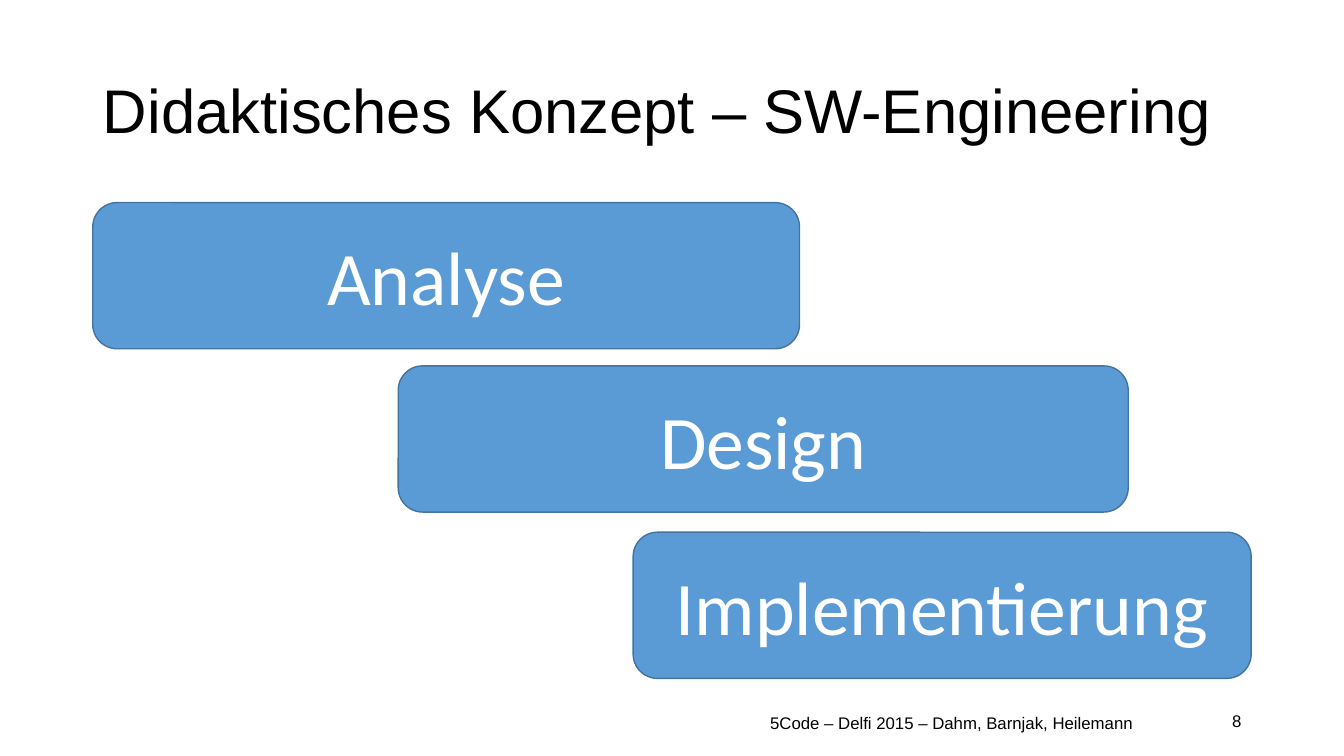
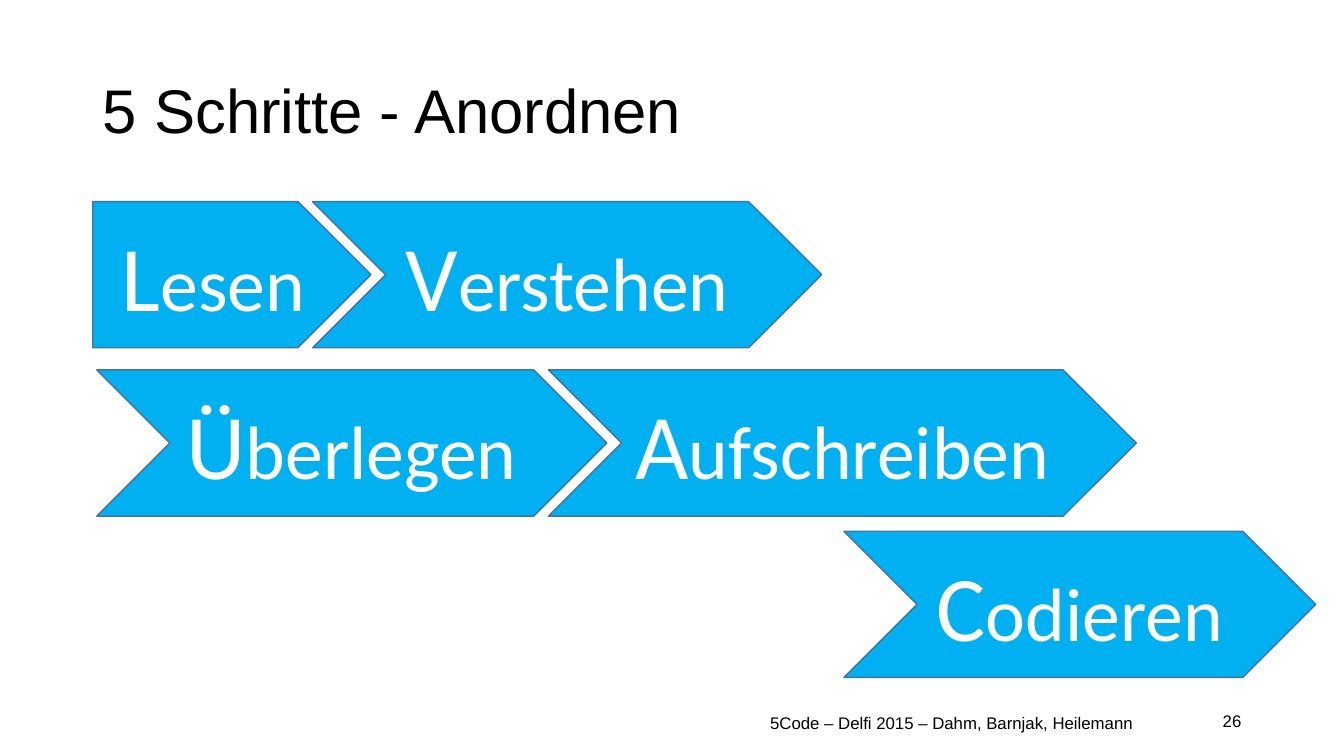
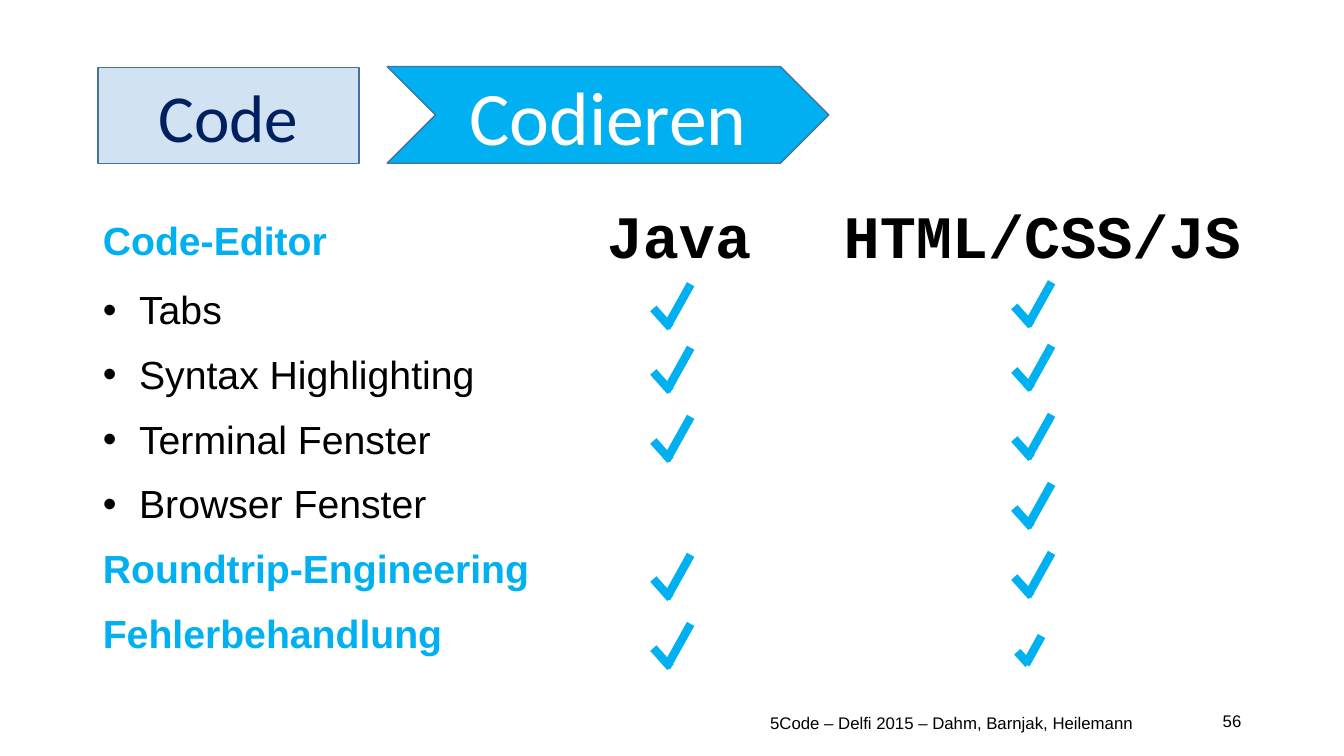
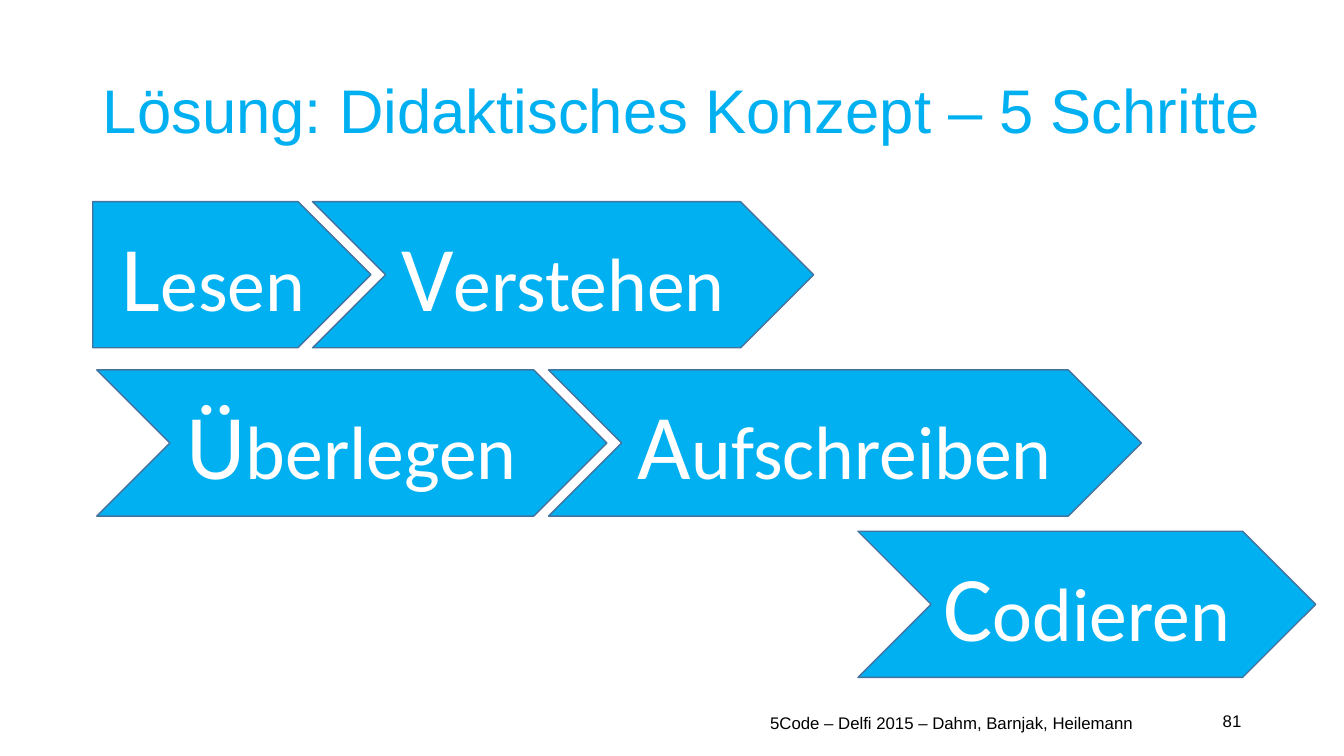
from lxml.etree import SubElement
from pptx import Presentation
from pptx.dml.color import RGBColor
from pptx.enum.shapes import MSO_CONNECTOR as Connector, MSO_SHAPE as Shape
from pptx.enum.text import MSO_ANCHOR as Anchor, MSO_AUTO_SIZE as AutoSize, PP_ALIGN as Align
from pptx.oxml.ns import qn
from pptx.util import Inches, Pt

COLORS = {
    "black": "000000",
    "white": "FFFFFF",
    "cyan": "00B0F0",
    "blue": "5B9BD5",
    "outline": "43739E",
    "navy": "002060",
}
HEADING_FONT = "Arial"
SHAPE_FONT = "Calibri"
CODE_FONT = "Courier New"
FOOTER = "5Code – Delfi 2015 – Dahm, Barnjak, Heilemann"
TITLE_ONLY, TITLE_AND_CONTENT = 5, 1
BLOCK_HEIGHT = 1.45


def rgb(color):
    return RGBColor.from_string(COLORS[color])


def box(left, top, width, height):
    return [Inches(value) for value in (left, top, width, height)]


def set_font(font, name, size, color, bold=False):
    font.name = name
    font.size = Pt(size)
    font.color.rgb = rgb(color)
    font.bold = bold


def move(shape, left, top, width, height):
    shape.left, shape.top, shape.width, shape.height = box(left, top, width, height)


def add_text(slide, place, text, align=Align.LEFT, anchor=Anchor.MIDDLE):
    """Add a one-line text box and return its paragraph."""
    frame = slide.shapes.add_textbox(*box(*place)).text_frame
    frame.word_wrap = True
    frame.vertical_anchor = anchor
    paragraph = frame.paragraphs[0]
    paragraph.text = text
    paragraph.alignment = align
    return paragraph


# Shared slide parts
def add_slide(presentation, layout, number):
    slide = presentation.slides.add_slide(presentation.slide_layouts[layout])
    for place, text, align in [
        ((7.19, 6.97, 4.5, 0.4), FOOTER, Align.CENTER),
        ((11.69, 6.95, 0.72, 0.4), str(number), Align.RIGHT),
    ]:
        paragraph = add_text(slide, place, text, align)
        set_font(paragraph.font, HEADING_FONT, 12, "black")
    return slide


def set_title(slide, text, color="black", width=11.5):
    title = slide.shapes.title
    move(title, 0.92, 0.4, width, BLOCK_HEIGHT)
    frame = title.text_frame
    frame.auto_size = AutoSize.NONE
    frame.vertical_anchor = Anchor.MIDDLE
    paragraph = frame.paragraphs[0]
    paragraph.text = text
    paragraph.alignment = Align.LEFT
    paragraph.line_spacing = 0.9
    set_font(paragraph.font, HEADING_FONT, 44, color)


def add_block(slide, kind, place, text, fill="cyan", color="white", size=54, initial_size=None):
    """Add an outlined block; initial_size enlarges its first letter."""
    block = slide.shapes.add_shape(kind, *box(*place))
    block.shadow.inherit = False
    block.fill.solid()
    block.fill.fore_color.rgb = rgb(fill)
    block.line.color.rgb = rgb("outline")
    block.line.width = Pt(1)
    frame = block.text_frame
    frame.vertical_anchor = Anchor.MIDDLE
    paragraph = frame.paragraphs[0]
    paragraph.alignment = Align.CENTER
    set_font(paragraph.font, SHAPE_FONT, size, color)
    if initial_size:
        initial = paragraph.add_run()
        initial.text = text[0]
        initial.font.size = Pt(initial_size)
        text = text[1:]
    paragraph.add_run().text = text
    return block


def set_opacity(shape, percent):
    color = shape.fill._xPr.find(qn("a:solidFill"))[0]
    SubElement(color, qn("a:alpha"), val=str(percent * 1000))


# The five steps, arranged in three rows
def add_steps(slide, verstehen_width, aufschreiben_width, codieren_left):
    steps = [
        ("Lesen", Shape.PENTAGON, 0.92, 2, 2.76),
        ("Verstehen", Shape.CHEVRON, 3.1, 2, verstehen_width),
        ("Überlegen", Shape.CHEVRON, 0.96, 3.67, 5.06),
        ("Aufschreiben", Shape.CHEVRON, 5.44, 3.67, aufschreiben_width),
        ("Codieren", Shape.CHEVRON, codieren_left, 5.27, 13.05 - codieren_left),
    ]
    for text, kind, left, top, width in steps:
        add_block(slide, kind, (left, top, width, BLOCK_HEIGHT), text, initial_size=66)


# Feature list, column headers and check marks
def format_feature(paragraph, bullet):
    properties = paragraph._p.get_or_add_pPr()
    indent = Inches(0.36) if bullet else 0
    properties.set("marL", str(indent))
    properties.set("indent", str(-indent))
    if bullet:
        SubElement(properties, qn("a:buFont"), typeface=HEADING_FONT)
        SubElement(properties, qn("a:buChar"), char="•")
    else:
        SubElement(properties, qn("a:buNone"))
    paragraph.line_spacing = 0.9
    set_font(paragraph.font, HEADING_FONT, 28, "black" if bullet else "cyan", not bullet)


def fill_features(body):
    move(body, 0.92, 2.15, 4.9, 4.61)
    frame = body.text_frame
    frame.auto_size = AutoSize.NONE
    frame.vertical_anchor = Anchor.TOP
    features = [
        ("Code-Editor", False),
        ("Tabs", True),
        ("Syntax Highlighting", True),
        ("Terminal Fenster", True),
        ("Browser Fenster", True),
        ("Roundtrip-Engineering", False),
        ("Fehlerbehandlung", False),
    ]
    for index, (text, bullet) in enumerate(features):
        paragraph = frame.add_paragraph() if index else frame.paragraphs[0]
        paragraph.text = text
        format_feature(paragraph, bullet)
        paragraph.space_before = Pt(10 if index else 0)
        paragraph.space_after = Pt(6 if index else 9)


def add_column_headers(slide):
    for text, left, width in [("Java", 5.92, 1.8), ("HTML/CSS/JS", 8.27, 4.3)]:
        paragraph = add_text(slide, (left, 2, width, 0.8), text, anchor=Anchor.TOP)
        paragraph.line_spacing = 0.9
        set_font(paragraph.font, CODE_FONT, 43, "black", bold=True)


def add_check(slide, left, top, scale=1):
    group = slide.shapes.add_group_shape()
    for stroke in [(0, 0.24, 0.17, 0.43), (0.13, 0.43, 0.37, 0)]:
        x1, y1, x2, y2 = [scale * value for value in stroke]
        ends = box(left + x1, top + y1, left + x2, top + y2)
        line = group.shapes.add_connector(Connector.STRAIGHT, *ends)
        line.line.color.rgb = rgb("cyan")
        line.line.width = Pt(6)
        SubElement(line._element.spPr, qn("a:effectLst"))


def add_checks(slide):
    row_tops = [2.82] + [3.45 + 0.685 * row for row in range(5)]
    browser_row, last_row = 3, 5
    for row, top in enumerate(row_tops):
        if row != browser_row:
            add_check(slide, 6.48, top)
        if row != last_row:
            add_check(slide, 10.06, top - 0.02)
    add_check(slide, 10.09, 6.31, scale=0.65)


# Slides
def build_engineering(presentation):
    slide = add_slide(presentation, TITLE_ONLY, 8)
    set_title(slide, "Didaktisches Konzept – SW-Engineering")
    for text, left, top, width in [
        ("Analyse", 0.92, 2.01, 7.01),
        ("Design", 3.95, 3.63, 7.24),
        ("Implementierung", 6.28, 5.28, 6.13),
    ]:
        place = (left, top, width, BLOCK_HEIGHT)
        add_block(slide, Shape.ROUNDED_RECTANGLE, place, text, fill="blue")


def build_arrangement(presentation):
    slide = add_slide(presentation, TITLE_ONLY, 26)
    set_title(slide, "5 Schritte - Anordnen")
    add_steps(slide, 5.05, 5.83, 8.37)


def build_coding(presentation):
    slide = add_slide(presentation, TITLE_AND_CONTENT, 56)
    title = slide.shapes.title._element
    title.getparent().remove(title)
    code = add_block(slide, Shape.RECTANGLE, (0.97, 0.67, 2.59, 0.95), "Code", "blue", "navy", 48)
    set_opacity(code, 28)
    add_block(slide, Shape.CHEVRON, (3.84, 0.66, 4.38, 0.96), "Codieren")
    fill_features(slide.placeholders[1])
    add_column_headers(slide)
    add_checks(slide)


def build_solution(presentation):
    slide = add_slide(presentation, TITLE_ONLY, 81)
    set_title(slide, "Lösung: Didaktisches Konzept – 5 Schritte", "cyan", 12.13)
    add_steps(slide, 4.97, 5.88, 8.51)


def main():
    presentation = Presentation()
    presentation.slide_width = Inches(13.33)
    presentation.slide_height = Inches(7.5)
    build_engineering(presentation)
    build_arrangement(presentation)
    build_coding(presentation)
    build_solution(presentation)
    presentation.save("out.pptx")


if __name__ == "__main__":
    main()
